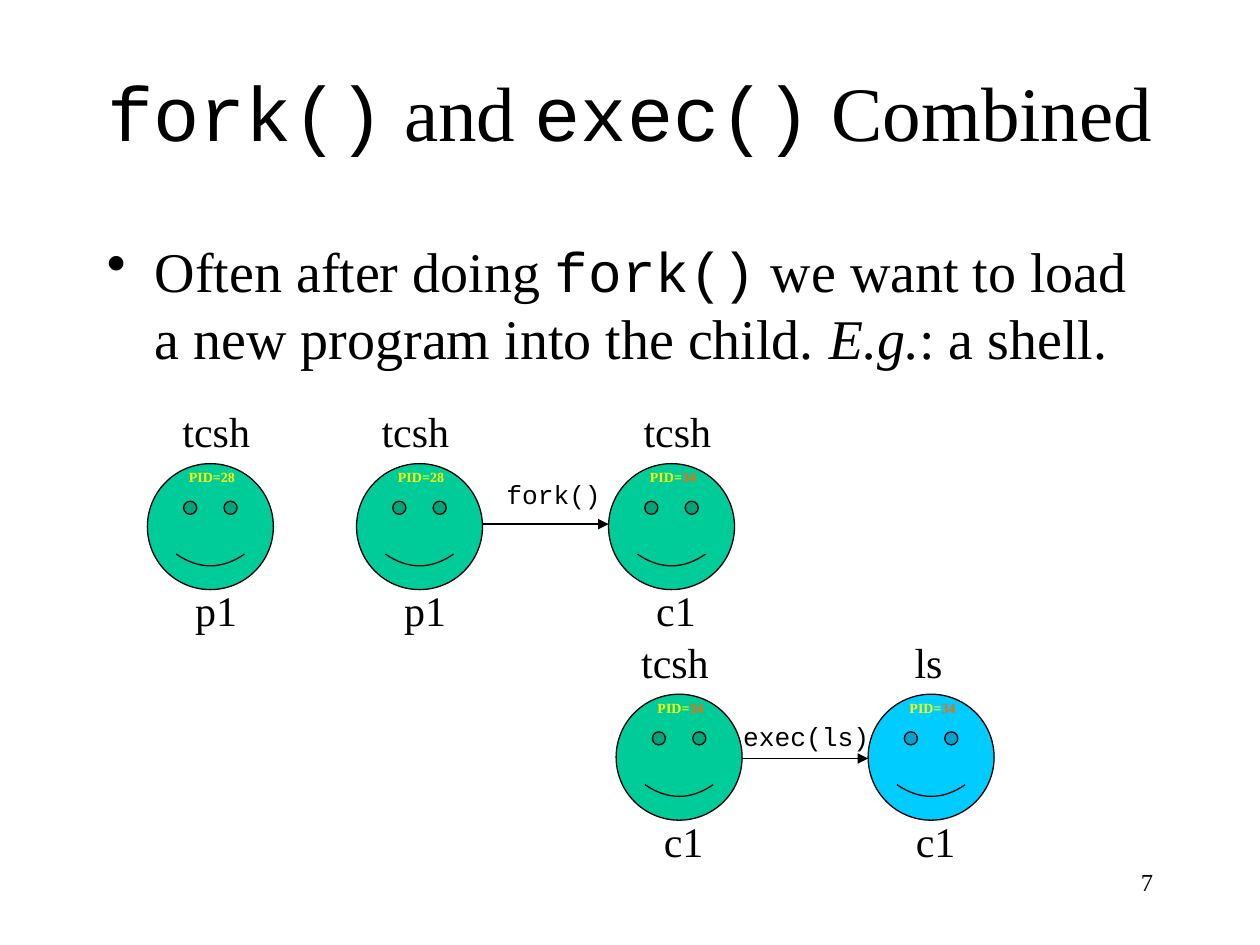
from pptx import Presentation
from pptx.dml.color import RGBColor
from pptx.enum.shapes import MSO_CONNECTOR, MSO_SHAPE
from pptx.enum.text import MSO_ANCHOR, MSO_AUTO_SIZE, PP_ALIGN
from pptx.oxml.ns import qn
from pptx.util import Inches, Pt
from lxml.etree import SubElement

COLORS = {"ink": "000000", "green": "00CC99", "blue": "00CCFF",
          "yellow": "FFFF00", "orange": "FF6600"}
SERIF, MONO = "Times New Roman", "Courier New"


def color(name):
    """Return the named colour."""
    return RGBColor.from_string(COLORS[name])


def add_run(para, text, size, face=SERIF, ink="ink", bold=False, italic=False):
    """Append one formatted run to a paragraph."""
    run = para.add_run()
    run.text = text
    font = run.font
    font.name, font.size = face, Pt(size)
    font.bold, font.italic = bold, italic
    font.color.rgb = color(ink)


def add_text(shapes, box, runs, wrap=False, align=PP_ALIGN.LEFT):
    """Place a text box of one paragraph and return the paragraph."""
    frame = shapes.add_textbox(*map(Inches, box)).text_frame
    frame.word_wrap = wrap
    frame.auto_size = MSO_AUTO_SIZE.NONE if wrap else MSO_AUTO_SIZE.SHAPE_TO_FIT_TEXT
    para = frame.paragraphs[0]
    para.alignment = align
    for run in runs:
        add_run(para, *run)
    return para


def add_title(slide, box):
    """Fill and place the title."""
    title = slide.shapes.title
    title.left, title.top, title.width, title.height = map(Inches, box)
    frame = title.text_frame
    frame.auto_size = MSO_AUTO_SIZE.NONE
    frame.vertical_anchor = MSO_ANCHOR.MIDDLE
    para = frame.paragraphs[0]
    para.alignment = PP_ALIGN.CENTER
    for text, face in (("fork()", MONO), (" and ", SERIF),
                       ("exec()", MONO), (" Combined", SERIF)):
        add_run(para, text, 44, face)


def add_body(slide, box):
    """Place the bulleted statement."""
    runs = [("Often after doing ", 32), ("fork()", 32, MONO),
            (" we want to load a new program into the child. ", 32),
            ("E.g.", 32, SERIF, "ink", False, True), (": a shell.", 32)]
    para = add_text(slide.shapes, box, runs, wrap=True)
    para.space_before = Pt(6.4)
    props = para._p.get_or_add_pPr()
    props.set("marL", str(Inches(0.38)))
    props.set("indent", str(-Inches(0.38)))
    SubElement(props, qn("a:buChar")).set("char", "•")


def add_process(slide, box, fill, label, pid, program, shift, width=0.74):
    """Draw a process face with its PID, label and program name."""
    left, top = box[:2]
    shapes = slide.shapes.add_group_shape().shapes
    face = shapes.add_shape(MSO_SHAPE.SMILEY_FACE, *map(Inches, box))
    face.adjustments[0] = 0.047
    face.shadow.inherit = False
    face.fill.solid()
    face.fill.fore_color.rgb = color(fill)
    face.line.color.rgb = color("ink")
    face.line.width = Pt(0.75)
    add_text(shapes, (left + 0.23, top - 0.01, 0.57, 0.23),
             [(text, 8, SERIF, ink, True) for text, ink in pid])
    add_text(shapes, (left + 0.28, top + 0.91, 0.53, 0.5), [(label, 24)])
    add_text(slide.shapes, (left + shift, top - 0.51, width, 0.5), [(program, 24)])


def add_call(slide, start, text, box):
    """Draw a one-inch arrow with the call it stands for."""
    x, y = start
    line = slide.shapes.add_connector(
        MSO_CONNECTOR.STRAIGHT, *map(Inches, (x, y, x + 1, y)))
    line.line.color.rgb = color("ink")
    line.line.width = Pt(0.75)
    SubElement(line.line._get_or_add_ln(), qn("a:tailEnd")).set("type", "triangle")
    SubElement(line._element.spPr, qn("a:effectLst"))
    add_text(slide.shapes, box, [(text, 15, MONO)])


def main():
    """Build and save the slide."""
    deck = Presentation()
    deck.slide_width, deck.slide_height = Inches(10), Inches(7.5)
    slide = deck.slides.add_slide(deck.slide_layouts[5])
    add_title(slide, (0.75, 0.25, 8.5, 1.25))
    add_body(slide, (0.75, 1.83, 8.5, 1.4))
    add_text(slide.shapes, (7.17, 6.83, 2.08, 0.5), [("7", 14)],
             wrap=True, align=PP_ALIGN.RIGHT)

    parent = [("PID=28", "yellow")]
    child = [("PID=", "yellow"), ("34", "orange")]
    upper, lower = 3.68, 5.51
    add_process(slide, (1.17, upper, 1, 1), "green", "p1", parent, "tcsh", 0.18)
    add_process(slide, (2.83, upper, 1, 1), "green", "p1", parent, "tcsh", 0.1)
    add_process(slide, (4.83, upper, 1, 1), "green", "c1", child, "tcsh", 0.18)
    add_process(slide, (4.89, lower, 1, 1), "green", "c1", child, "tcsh", 0.1)
    add_process(slide, (6.89, lower, 1, 1), "blue", "c1", child, "ls", 0.27, 0.42)
    add_call(slide, (3.83, 4.16), "fork()", (3.92, 3.75, 0.95, 0.35))
    add_call(slide, (5.89, 6.02), "exec(ls)", (5.8, 5.67, 1.2, 0.35))
    deck.save("out.pptx")


if __name__ == "__main__":
    main()
